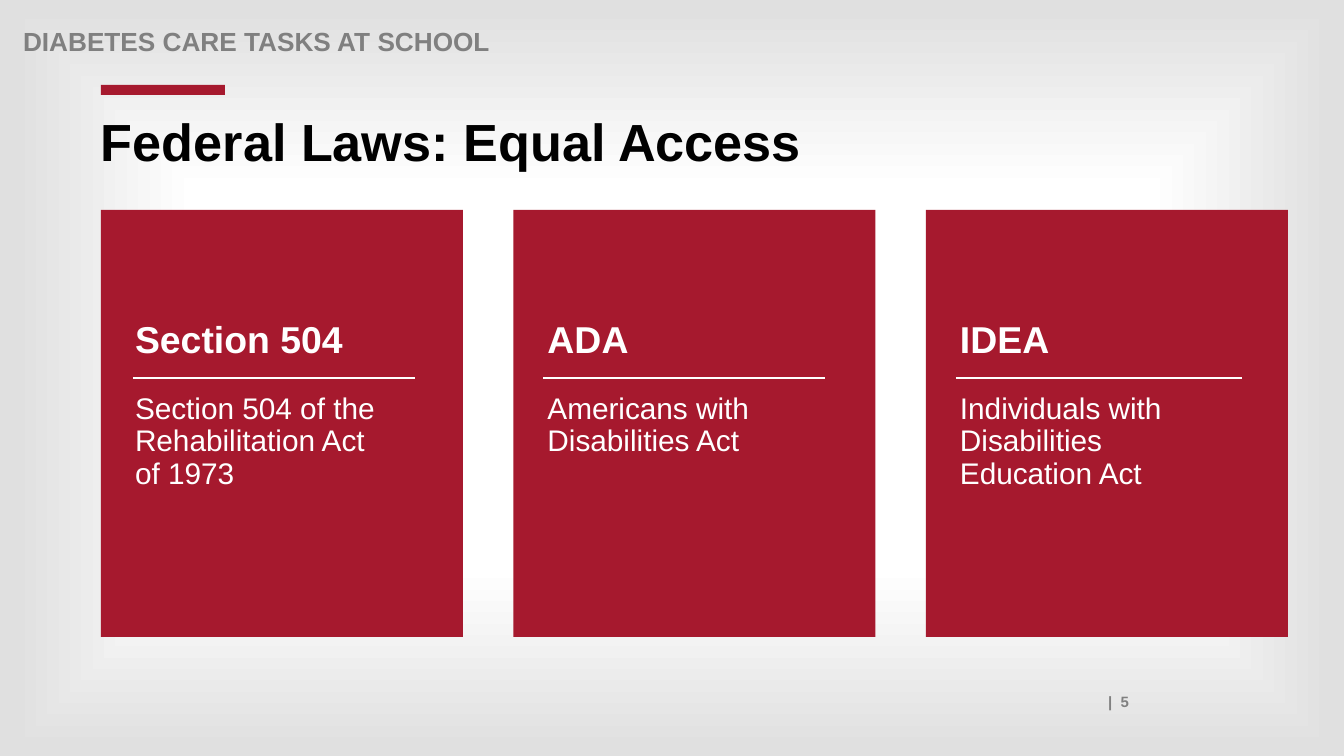
import pptx
import pptx.util
import pptx.oxml
import pptx.oxml.ns
import pptx.dml.color
import pptx.enum.shapes
import pptx.enum.text

RGB = pptx.dml.color.RGBColor
RED = RGB(0xA6, 0x19, 0x2E)
WHITE = RGB(0xFF, 0xFF, 0xFF)
GREY = RGB(0x80, 0x80, 0x80)
BLACK = RGB(0, 0, 0)
SCALE = 914400 / 100.8
ALIGN = pptx.enum.text.PP_ALIGN

LABEL = {"size": 18.7, "bold": True, "color": GREY}
TITLE = {"size": 37.3, "bold": True, "color": BLACK}
HEAD = {"size": 26.7, "bold": True, "color": WHITE}
BODY = {"size": 21.3, "bold": False, "color": WHITE}
FOOT = {"size": 10.7, "bold": True, "color": GREY}

LAWS = [
    ("Section 504", "Section 504 of the Rehabilitation Act of 1973", 32, 282),
    ("ADA", "Americans with Disabilities Act", 30, 282),
    ("IDEA", "Individuals with Disabilities Education Act", 30, 286),
]


def px(*vals):
    return [pptx.util.Emu(round(val * SCALE)) for val in vals]


def write(slide, box, words, style, inset=(10, 5), align=ALIGN.LEFT, space=0.9):
    frame = slide.shapes.add_textbox(*px(*box)).text_frame
    side, edge = px(*inset)
    setup = {
        "word_wrap": True,
        "margin_left": side,
        "margin_right": side,
        "margin_top": edge,
        "margin_bottom": edge,
        "vertical_anchor": pptx.enum.text.MSO_ANCHOR.TOP,
    }
    for key, val in setup.items():
        setattr(frame, key, val)
    para = frame.paragraphs[0]
    para.alignment = align
    para.line_spacing = space
    run = para.add_run()
    run.text = words
    look = {
        "name": "Arial",
        "size": pptx.util.Pt(style["size"]),
        "bold": style["bold"],
    }
    for key, val in look.items():
        setattr(run.font, key, val)
    run.font.color.rgb = style["color"]


def block(slide, box):
    kind = pptx.enum.shapes.MSO_SHAPE.RECTANGLE
    shape = slide.shapes.add_shape(kind, *px(*box))
    shape.shadow.inherit = False
    shape.fill.solid()
    shape.fill.fore_color.rgb = RED
    shape.line.fill.background()


def rule(slide, left, top, width):
    kind = pptx.enum.shapes.MSO_CONNECTOR.STRAIGHT
    line = slide.shapes.add_connector(kind, *px(left, top, left + width, top))
    line.line.color.rgb = WHITE
    line.line.width = pptx.util.Pt(2)
    props = line._element.spPr
    props.append(pptx.oxml.parse_xml(
        f"<a:effectLst {pptx.oxml.ns.nsdecls('a')}/>"))


def backdrop(slide):
    stops = "".join(
        f'<a:gs pos="{pos * 1000}"><a:srgbClr val="{tone}"/></a:gs>'
        for pos, tone in ((12, WHITE), (50, WHITE), (98, RGB(0xE0, 0xE0, 0xE0)))
    )
    slide.element.cSld.insert(0, pptx.oxml.parse_xml(
        f"<p:bg {pptx.oxml.ns.nsdecls('p', 'a')}><p:bgPr>"
        f'<a:gradFill rotWithShape="1"><a:gsLst>{stops}</a:gsLst>'
        '<a:path path="shape"><a:fillToRect l="50000" t="50000" '
        'r="50000" b="50000"/></a:path></a:gradFill>'
        "<a:effectLst/></p:bgPr></p:bg>"))


def header(slide, left, top, width):
    write(slide, (left, top, width, 28), "DIABETES CARE TASKS AT SCHOOL", LABEL)


def title(slide, left, top, width):
    block(slide, (left, top, 124, 10))
    write(slide, (left, top + 31, width, 60), "Federal Laws: Equal Access",
          TITLE, inset=(0, 0))


def card(slide, box, law):
    left, top = box[:2]
    name, full, start, span = law
    block(slide, box)
    for words, drop, style in ((name, 106, HEAD), (full, 179, BODY)):
        write(slide, (left + 24, top + drop, 268, 93), words, style)
    rule(slide, left + start, top + 168, span)


def cards(slide, left, top, width, height):
    pitch = (width - 362) / (len(LAWS) - 1)
    for num, law in enumerate(LAWS):
        card(slide, (left + num * pitch, top, 362, height), law)


def footer(slide, left, top, width):
    write(slide, (left, top, width, 28), "|  5", FOOT,
          align=ALIGN.RIGHT, space=1.0)


def main():
    deck = pptx.Presentation()
    deck.slide_width, deck.slide_height = px(1344, 756)
    slide = deck.slides.add_slide(deck.slide_layouts[6])
    backdrop(slide)
    footer(slide, 122, 688, 1017)
    header(slide, 13, 24, 1109)
    cards(slide, 101, 210, 1187, 427)
    title(slide, 101, 85, 1143)
    deck.save("out.pptx")


if __name__ == "__main__":
    main()
